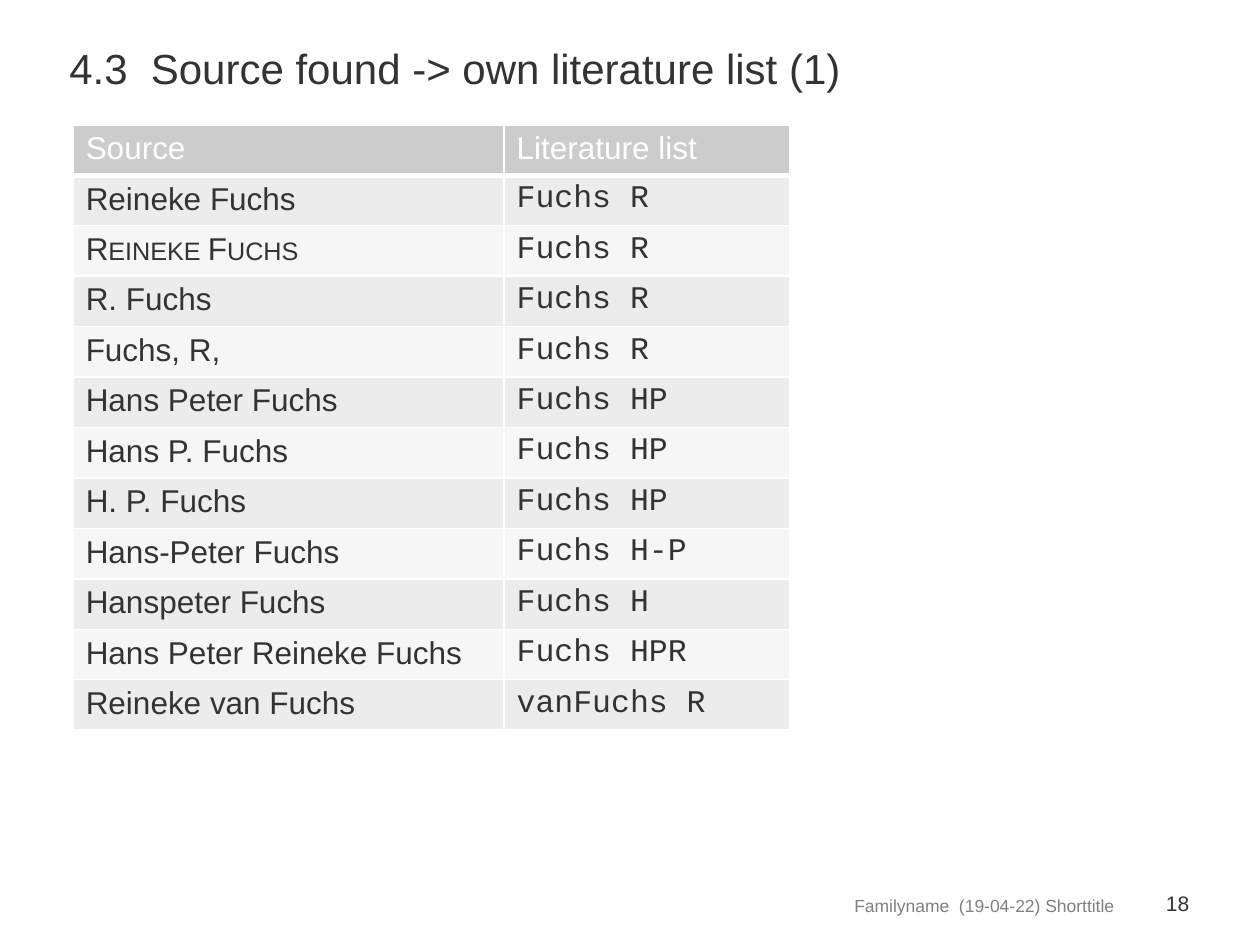
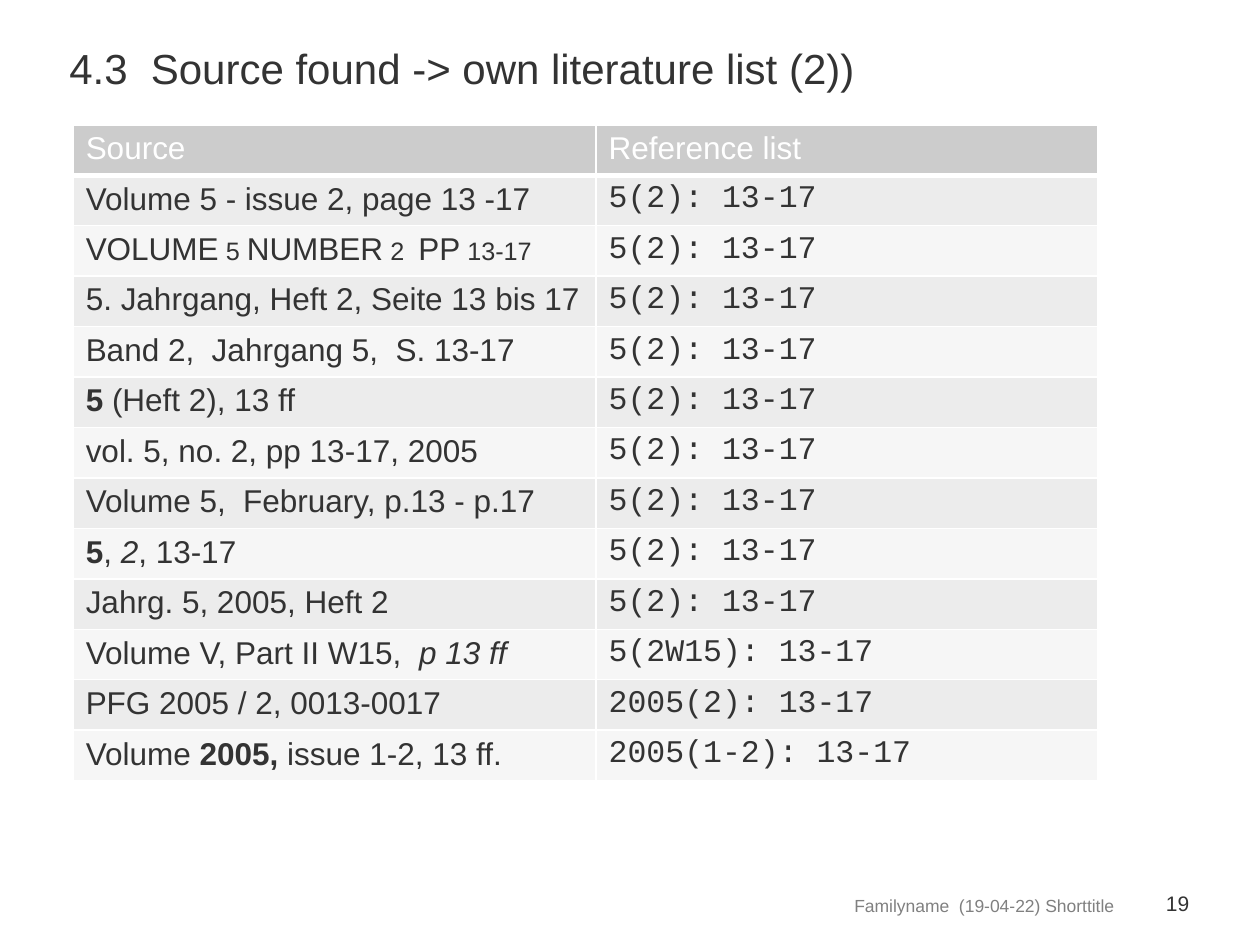
from lxml import etree
from pptx import Presentation
from pptx.dml.color import RGBColor
from pptx.enum.text import MSO_ANCHOR, PP_ALIGN
from pptx.oxml.ns import qn
from pptx.util import Pt

BOTTOM, MIDDLE = MSO_ANCHOR.BOTTOM, MSO_ANCHOR.MIDDLE
LEFT, RIGHT = PP_ALIGN.LEFT, PP_ALIGN.RIGHT

COLORS = {
    "text": "333333",
    "footer": "808080",
    "white": "FFFFFF",
    "header": "CCCCCC",
    "odd_row": "ECECEC",
    "even_row": "F6F6F6",
}
TITLE = {"name": "Arial", "size": Pt(24), "color": "text"}
FOOTER = {"name": "Arial", "size": Pt(10), "color": "footer"}
NUMBER = {"name": "Arial", "size": Pt(12), "color": "text"}
HEADER = {"name": "Arial", "size": Pt(18), "color": "white", "bold": False}
SOURCE = {**HEADER, "color": "text"}
ENTRY = {**SOURCE, "name": "Courier New"}
BOLD = {"bold": True}
ITALIC = {"italic": True}
SMALL_CAPS = {"small_caps": True}

ROW_HEIGHT = 28.8
FOOTER_TEXT = "Familyname  (19-04-22) Shorttitle"

# A source is plain text or a list of (text, extra format) runs.
NAMES = [
    ("Reineke Fuchs", "Fuchs R"),
    ([("Reineke Fuchs", SMALL_CAPS)], "Fuchs R"),
    ("R. Fuchs", "Fuchs R"),
    ("Fuchs, R,", "Fuchs R"),
    ("Hans Peter Fuchs", "Fuchs HP"),
    ("Hans P. Fuchs", "Fuchs HP"),
    ("H. P. Fuchs", "Fuchs HP"),
    ("Hans-Peter Fuchs", "Fuchs H-P"),
    ("Hanspeter Fuchs", "Fuchs H"),
    ("Hans Peter Reineke Fuchs", "Fuchs HPR"),
    ("Reineke van Fuchs", "vanFuchs R"),
]
SAME_ISSUE = [
    "Volume 5 - issue 2, page 13 -17",
    [("VOLUME 5 NUMBER 2  PP 13-17", SMALL_CAPS)],
    "5. Jahrgang, Heft 2, Seite 13 bis 17",
    "Band 2,  Jahrgang 5,  S. 13-17",
    [("5", BOLD), (" (Heft 2), 13 ff", {})],
    "vol. 5, no. 2, pp 13-17, 2005",
    "Volume 5,  February, p.13 - p.17",
    [("5", BOLD), (", ", {}), ("2", ITALIC), (", 13-17", {})],
    "Jahrg. 5, 2005, Heft 2",
]
VOLUMES = [(source, "5(2): 13-17") for source in SAME_ISSUE] + [
    ([("Volume V, Part II W15,  ", {}), ("p 13 ff", ITALIC)], "5(2W15): 13-17"),
    ("PFG 2005 / 2, 0013-0017", "2005(2): 13-17"),
    ([("Volume ", {}), ("2005, ", BOLD), ("issue 1-2, 13 ff.", {})], "2005(1-2): 13-17"),
]


class Deck:
    def __init__(self):
        self.presentation = Presentation()
        self.presentation.slide_width = Pt(720)
        self.presentation.slide_height = Pt(540)
        self.slide = None

    def add_slide(self, title, number):
        """Start a slide with its title, footer and page number."""
        layout = self.presentation.slide_layouts[6]
        self.slide = self.presentation.slides.add_slide(layout)
        self.add_text(FOOTER_TEXT, (325.4, 507.6, 318.2, 19.4), FOOTER, RIGHT, MIDDLE)
        self.add_text(str(number), (638.6, 504, 41, 23.8), NUMBER, RIGHT, MIDDLE,
                      (7.2, 3.6, 0, 3.6))
        self.add_text(title, (39.6, 6.5, 571, 48.2), TITLE, LEFT, BOTTOM,
                      (0, 3.6, 0, 1.44))

    def add_text(self, text, box, style, alignment, anchor, insets=(7.2, 3.6, 7.2, 3.6)):
        frame = self.slide.shapes.add_textbox(*map(Pt, box)).text_frame
        frame.word_wrap = True
        frame.vertical_anchor = anchor
        for side, inset in zip(("left", "top", "right", "bottom"), insets):
            setattr(frame, f"margin_{side}", Pt(inset))
        frame.paragraphs[0].alignment = alignment
        self.write_runs(frame.paragraphs[0], text, style)

    def write_runs(self, paragraph, content, style):
        runs = [(content, {})] if isinstance(content, str) else content
        for text, extra in runs:
            run = paragraph.add_run()
            run.text = text
            for key, value in {**style, **extra}.items():
                if key == "color":
                    run.font.color.rgb = RGBColor.from_string(COLORS[value])
                elif key == "small_caps":
                    run._r.get_or_add_rPr().set("cap", "small")
                else:
                    setattr(run.font, key, value)

    def add_table(self, headings, rows, widths):
        table = self.slide.shapes.add_table(
            len(rows) + 1, len(widths), Pt(41.8), Pt(71.3),
            Pt(sum(widths)), Pt(ROW_HEIGHT * (len(rows) + 1))).table
        table.first_row = table.horz_banding = False
        for column, width in zip(table.columns, widths):
            column.width = Pt(width)
        for index, contents in enumerate([headings, *rows]):
            table.rows[index].height = Pt(ROW_HEIGHT)
            fill = ("odd_row" if index % 2 else "even_row") if index else "header"
            styles = (SOURCE, ENTRY) if index else (HEADER, HEADER)
            for column, (content, style) in enumerate(zip(contents, styles)):
                cell = table.cell(index, column)
                self.set_borders(cell, bottom=1 if index else 3)
                cell.fill.solid()
                cell.fill.fore_color.rgb = RGBColor.from_string(COLORS[fill])
                self.write_runs(cell.text_frame.paragraphs[0], content, style)

    def set_borders(self, cell, bottom):
        properties = cell._tc.get_or_add_tcPr()
        for side, width in {"L": 1, "R": 1, "T": 1, "B": bottom}.items():
            line = etree.SubElement(properties, qn(f"a:ln{side}"), w=str(Pt(width)))
            solid = etree.SubElement(line, qn("a:solidFill"))
            etree.SubElement(solid, qn("a:srgbClr"), val=COLORS["white"])


def main():
    deck = Deck()
    deck.add_slide("4.3  Source found -> own literature list (1)", 18)
    deck.add_table(("Source", "Literature list"), NAMES, (246.2, 163.4))
    deck.add_slide("4.3  Source found -> own literature list (2))", 19)
    deck.add_table(("Source", "Reference list"), VOLUMES, (298.8, 286.6))
    deck.presentation.save("out.pptx")


if __name__ == "__main__":
    main()
